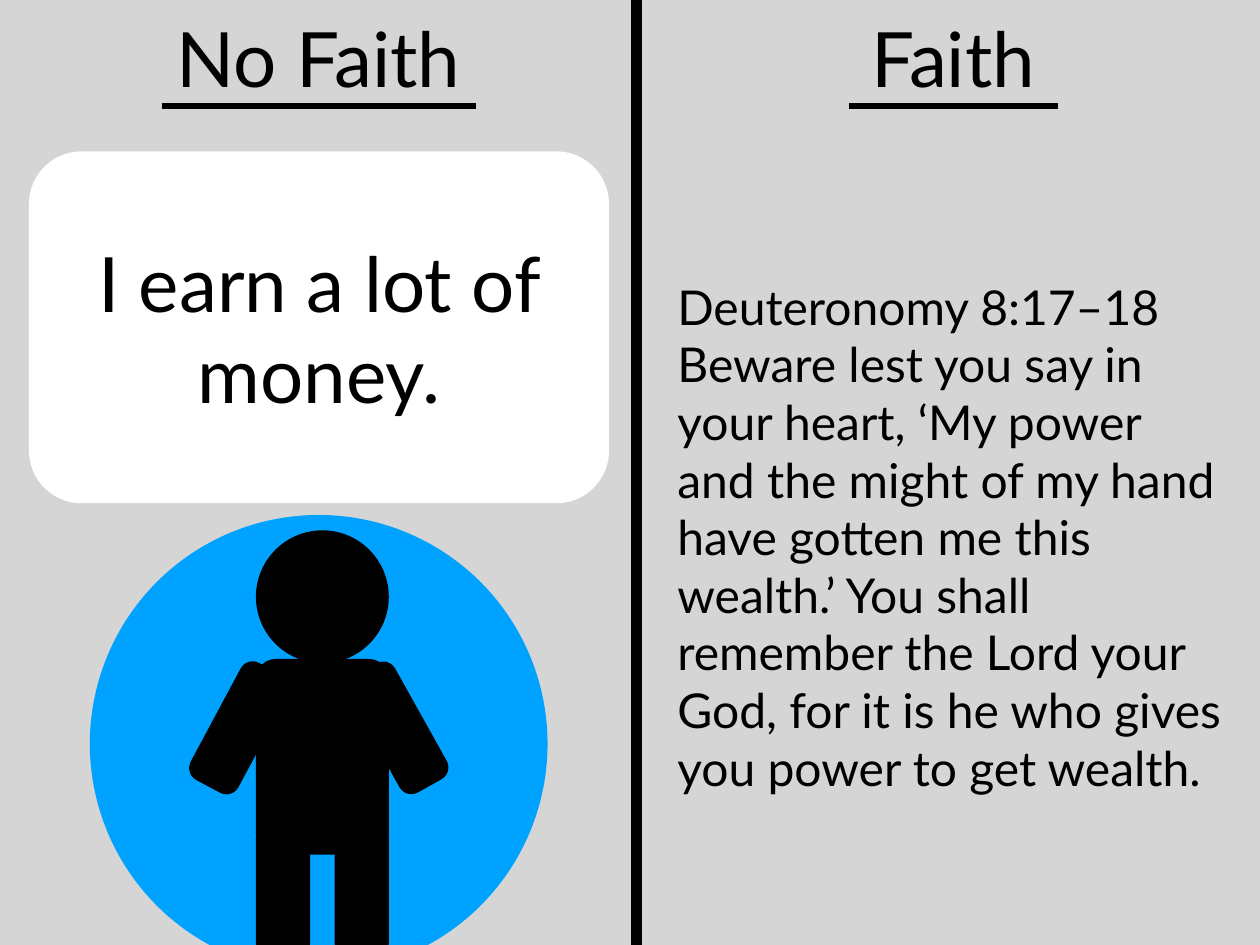
from lxml.etree import SubElement
from pptx import Presentation
from pptx.dml.color import RGBColor
from pptx.enum.shapes import MSO_CONNECTOR, MSO_SHAPE
from pptx.enum.text import MSO_ANCHOR, PP_ALIGN
from pptx.oxml.ns import qn
from pptx.util import Pt

BLACK = RGBColor(0x00, 0x00, 0x00)
WHITE = RGBColor(0xFF, 0xFF, 0xFF)
GREY = RGBColor(0xD5, 0xD5, 0xD5)
BLUE = RGBColor(0x00, 0xA2, 0xFF)

SLIDE_W, SLIDE_H = 1024, 768
VERSE = (
    "Beware lest you say in your heart, ‘My power and the might of my hand "
    "have gotten me this wealth.’ You shall remember the Lord your God, "
    "for it is he who gives you power to get wealth."
)


class SlideBuilder:
    """Holds the text style and the current slide; lengths are in points."""

    font = "Lato"
    color = BLACK
    inset = 4

    def __init__(self, s):
        self.s = s

    def background(self, color):
        fill = self.s.background.fill
        fill.solid()
        fill.fore_color.rgb = color

    def shape(self, kind, x, y, w, h, color, adj=None, rotation=0, group=None):
        shapes = group.shapes if group is not None else self.s.shapes
        sp = shapes.add_shape(kind, Pt(x), Pt(y), Pt(w), Pt(h))
        sp.shadow.inherit = False
        sp.fill.solid()
        sp.fill.fore_color.rgb = color
        sp.line.fill.background()
        sp.rotation = rotation
        if adj is not None:
            sp.adjustments[0] = adj
        return sp

    def line(self, x1, y1, x2, y2, width):
        c = self.s.shapes.add_connector(
            MSO_CONNECTOR.STRAIGHT, Pt(x1), Pt(y1), Pt(x2), Pt(y2))
        c.line.color.rgb = BLACK
        c.line.width = Pt(width)
        SubElement(c._element.spPr, qn("a:effectLst"))

    def fill_text(self, sp, paragraphs, size, align):
        tf = sp.text_frame
        tf.word_wrap = True
        tf.vertical_anchor = MSO_ANCHOR.MIDDLE
        tf.margin_left = tf.margin_right = Pt(self.inset)
        tf.margin_top = tf.margin_bottom = Pt(self.inset)
        for i, text in enumerate(paragraphs):
            p = tf.add_paragraph() if i else tf.paragraphs[0]
            p.alignment = align
            r = p.add_run()
            r.text = text
            r.font.name = self.font
            r.font.size = Pt(size)
            r.font.color.rgb = self.color

    def text(self, x, y, w, h, paragraphs, size, align=PP_ALIGN.LEFT):
        sp = self.s.shapes.add_textbox(Pt(x), Pt(y), Pt(w), Pt(h))
        self.fill_text(sp, paragraphs, size, align)

    def heading(self, center, title, underline):
        self.text(center - 228, 0.7, 456, 92, [title], 62, PP_ALIGN.CENTER)
        self.line(center - underline / 2, 86.4, center + underline / 2, 86.4, 5)

    def person(self, x, y):
        """Stick figure whose head has its top left corner at x, y."""
        group = self.s.shapes.add_group_shape()
        self.shape(MSO_SHAPE.OVAL, x, y, 108, 108, BLACK, group=group)
        self.shape(MSO_SHAPE.ROUNDED_RECTANGLE, x, y + 104.5, 108, 159, BLACK,
                   0.15, group=group)
        legs = [(0, 239, 0), (64, 239, 0)]
        arms = [(-35.3, 106.5, 28.2), (92.9, 106.5, 330.8)]
        for dx, dy, rotation in legs + arms:
            self.shape(MSO_SHAPE.ROUNDED_RECTANGLE, x + dx, y + dy, 44, 108,
                       BLACK, 0.25, rotation, group)


def main():
    prs = Presentation()
    prs.slide_width, prs.slide_height = Pt(SLIDE_W), Pt(SLIDE_H)
    b = SlideBuilder(prs.slides.add_slide(prs.slide_layouts[6]))
    b.background(GREY)

    # Person in a blue circle
    b.shape(MSO_SHAPE.OVAL, 73, 418.5, 372, 372, BLUE)
    b.person(208, 431)

    # Divider between the two halves
    b.line(517, 0, 517, SLIDE_H, 9)

    # Left half: statement card
    card = b.shape(MSO_SHAPE.ROUNDED_RECTANGLE, 23.5, 123, 471.5, 286, WHITE, 0.15)
    b.fill_text(card, ["I earn a lot of money."], 62, PP_ALIGN.CENTER)
    b.heading(259, "No Faith", 255)

    # Right half: Bible verse
    b.text(546.5, 167, 456.5, 538, ["Deuteronomy 8:17–18", VERSE], 39)
    b.heading(774.7, "Faith", 170)

    prs.save("out.pptx")


if __name__ == "__main__":
    main()
